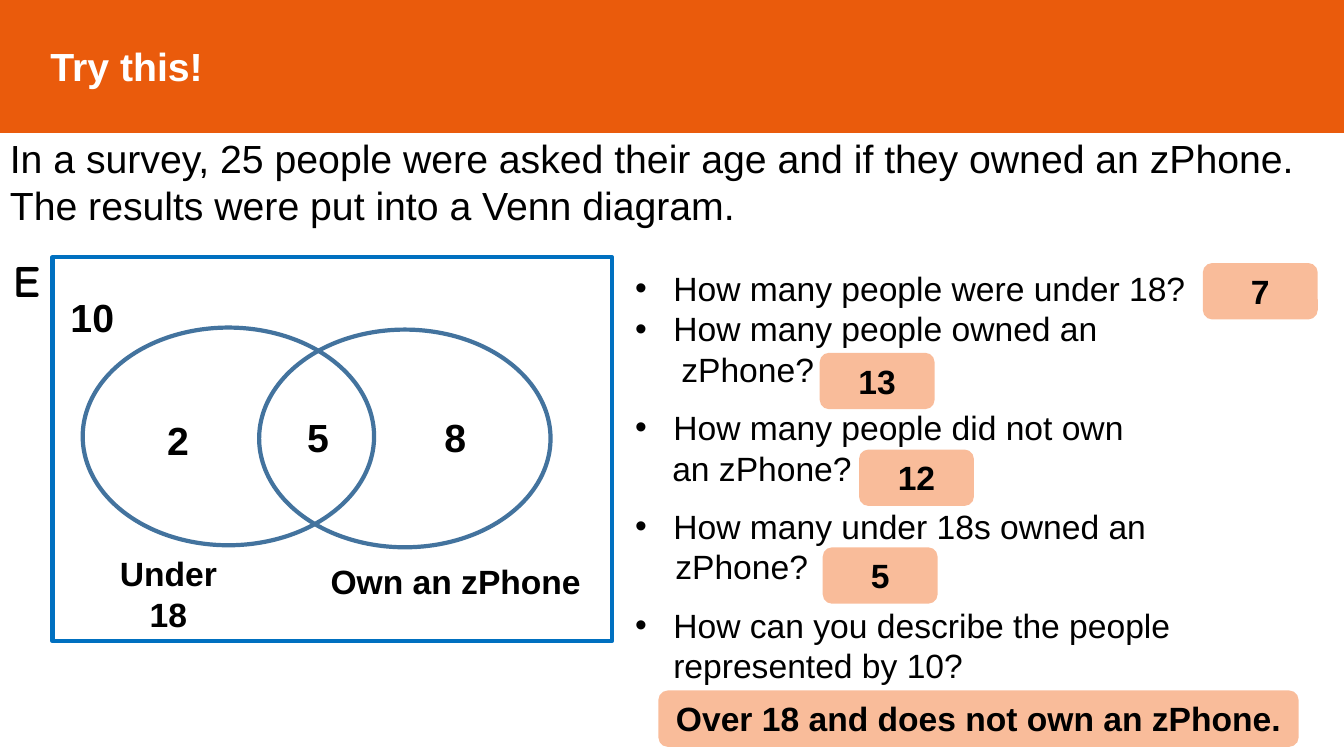
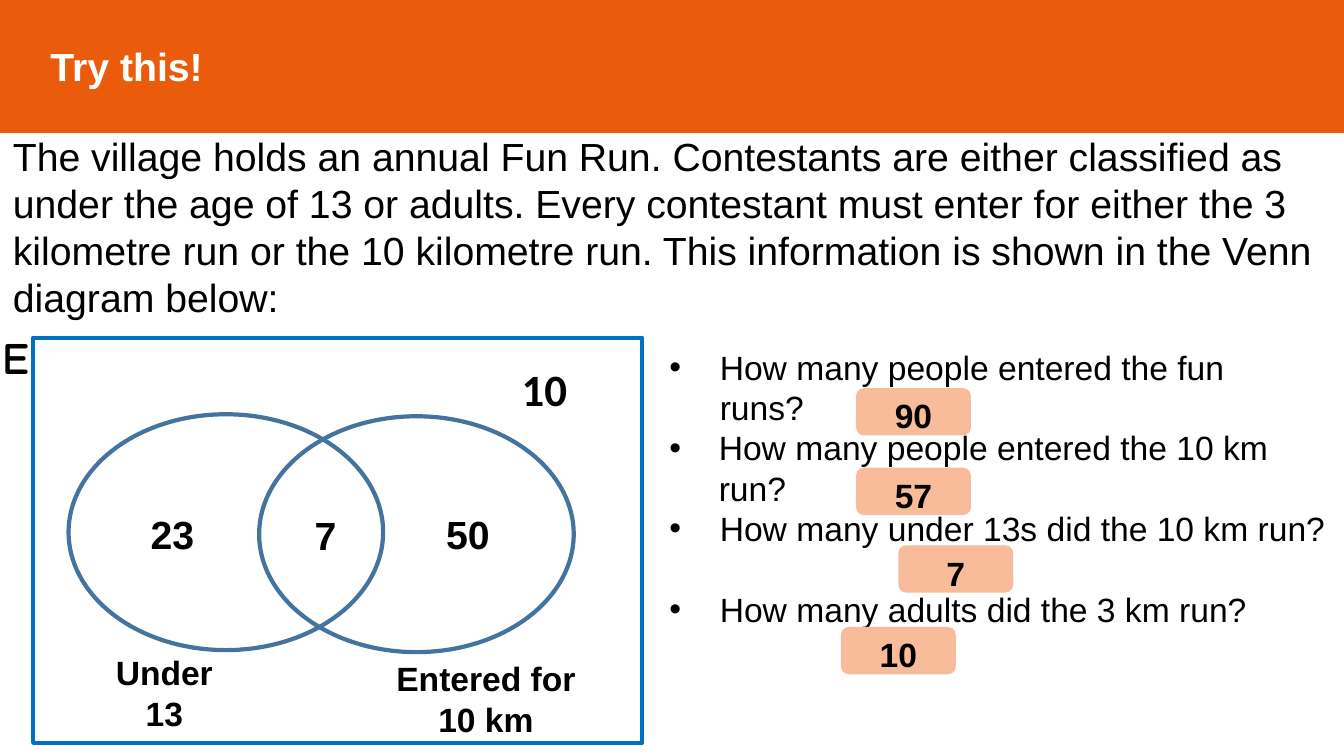
from dataclasses import dataclass

from lxml import etree
from pptx import Presentation
from pptx.dml.color import RGBColor
from pptx.enum.shapes import MSO_SHAPE
from pptx.enum.text import MSO_ANCHOR, PP_ALIGN
from pptx.oxml.ns import qn
from pptx.util import Inches, Pt

ORANGE = RGBColor(0xEA, 0x5B, 0x0C)
PEACH = RGBColor(0xF9, 0xBC, 0x9A)
BLUE = RGBColor(0x00, 0x70, 0xC0)
STEEL = RGBColor(0x43, 0x73, 0x9E)
BLACK = RGBColor(0, 0, 0)
WHITE = RGBColor(0xFF, 0xFF, 0xFF)

RECT = MSO_SHAPE.RECTANGLE
ROUND = MSO_SHAPE.ROUNDED_RECTANGLE
OVAL = MSO_SHAPE.OVAL
LEFT = PP_ALIGN.LEFT
CENTER = PP_ALIGN.CENTER
TOP = MSO_ANCHOR.TOP
MIDDLE = MSO_ANCHOR.MIDDLE

TITLE_ONLY = 5
WIDTH = 13.33
BADGE_W = 1.14


@dataclass(frozen=True)
class Box:
    left: float
    top: float
    width: float
    height: float

    def emu(self) -> tuple:
        return tuple(Inches(v) for v in (self.left, self.top, self.width, self.height))


@dataclass(frozen=True)
class Label:
    text: str
    box: Box
    size: int = 28
    font: str = "Arial"
    bold: bool = True
    align: PP_ALIGN = CENTER
    wrap: bool = True


@dataclass(frozen=True)
class Item:
    text: str
    indent: float = 0.38
    bullet: bool = True
    gap: float = 0


@dataclass(frozen=True)
class Badge:
    text: str
    left: float
    top: float
    width: float = BADGE_W


@dataclass(frozen=True)
class Task:
    frame: Box
    ovals: tuple
    labels: tuple
    list_box: Box
    items: tuple
    badge_h: float
    badges: tuple


def style(par, size: int, color: RGBColor, bold: bool, font: str = "Arial") -> None:
    for run in par.runs:
        run.font.name = font
        run.font.size = Pt(size)
        run.font.bold = bold
        run.font.color.rgb = color


def add_title(slide) -> None:
    title = slide.shapes.title
    title.left, title.top, title.width, title.height = Box(0, -0.01, WIDTH, 1.32).emu()
    title.fill.solid()
    title.fill.fore_color.rgb = ORANGE
    title.line.color.rgb = ORANGE
    title.line.width = Pt(1)
    frame = title.text_frame
    frame.text = "Try this!"
    frame.margin_left = Inches(0.5)
    frame.vertical_anchor = MIDDLE
    par = frame.paragraphs[0]
    par.alignment = LEFT
    style(par, 28, WHITE, True)


def add_outline(slide, kind: MSO_SHAPE, box: Box, color: RGBColor) -> None:
    shape = slide.shapes.add_shape(kind, *box.emu())
    shape.shadow.inherit = False
    shape.fill.background()
    shape.line.color.rgb = color
    shape.line.width = Pt(3)


def add_label(slide, label: Label) -> None:
    frame = slide.shapes.add_textbox(*label.box.emu()).text_frame
    frame.word_wrap = label.wrap
    frame.text = label.text
    par = frame.paragraphs[0]
    par.alignment = label.align
    style(par, label.size, BLACK, label.bold, label.font)


def add_list(slide, box: Box, items: tuple) -> None:
    frame = slide.shapes.add_textbox(*box.emu()).text_frame
    frame.word_wrap = True
    for index, item in enumerate(items):
        par = frame.add_paragraph() if index else frame.paragraphs[0]
        par.text = item.text
        par.space_before = Pt(item.gap)
        style(par, 24, BLACK, False)
        props = par._p.get_or_add_pPr()
        props.set("marL", str(Inches(item.indent)))
        if item.bullet:
            props.set("indent", str(-Inches(item.indent)))
            etree.SubElement(props, qn("a:buFont")).set("typeface", "Arial")
            etree.SubElement(props, qn("a:buChar")).set("char", "•")


def add_badge(slide, badge: Badge, height: float) -> None:
    box = Box(badge.left, badge.top, badge.width, height)
    shape = slide.shapes.add_shape(ROUND, *box.emu())
    shape.shadow.inherit = False
    shape.fill.solid()
    shape.fill.fore_color.rgb = PEACH
    shape.line.fill.background()
    frame = shape.text_frame
    frame.word_wrap = True
    frame.text = badge.text
    frame.vertical_anchor = TOP
    par = frame.paragraphs[0]
    par.alignment = CENTER
    style(par, 24, BLACK, True)


def add_task(deck, task: Task) -> None:
    slide = deck.slides.add_slide(deck.slide_layouts[TITLE_ONLY])
    add_title(slide)
    add_outline(slide, RECT, task.frame, BLUE)
    for oval in task.ovals:
        add_outline(slide, OVAL, oval, STEEL)
    for label in task.labels:
        add_label(slide, label)
    add_list(slide, task.list_box, task.items)
    for badge in task.badges:
        add_badge(slide, badge, task.badge_h)


def intro(text: str, box: Box) -> Label:
    return Label(text, box, bold=False, align=LEFT)


def letter(left: float, top: float) -> Label:
    return Label("E", Box(left, top, 0.4, 0.64), 32, "Comic Neue", align=LEFT, wrap=False)


PHONE = Task(
    frame=Box(0.52, 2.55, 5.55, 3.81),
    ovals=(Box(0.82, 3.25, 2.89, 2.16), Box(2.57, 3.27, 2.89, 2.16)),
    labels=(
        intro(
            "In a survey, 25 people were asked their age and if they owned an zPhone. "
            "The results were put into a Venn diagram.",
            Box(0, 1.28, 13.07, 1.22),
        ),
        letter(0.04, 2.46),
        Label("Own an zPhone", Box(2.96, 5.52, 3.12, 0.5), 24),
        Label("Under 18", Box(0.88, 5.44, 1.58, 0.91), 24),
        Label("8", Box(3.84, 4.05, 1.35, 0.57)),
        Label("5", Box(2.48, 4.05, 1.35, 0.57)),
        Label("2", Box(1.09, 4.08, 1.35, 0.57)),
        Label("10", Box(0.24, 2.86, 1.35, 0.57)),
    ),
    list_box=Box(6.2, 2.61, 7.04, 5.07),
    items=(
        Item("How many people were under 18?"),
        Item("How many people owned an"),
        Item("zPhone?", 0.46, False),
        Item("How many people did not own", gap=13),
        Item("an zPhone?", 0.37, False),
        Item("How many under 18s owned an", gap=13),
        Item("zPhone?", 0.4, False),
        Item("How can you describe the people represented by 10?", gap=13),
    ),
    badge_h=0.56,
    badges=(
        Badge("7", 11.93, 2.61),
        Badge("13", 8.13, 3.5),
        Badge("12", 8.52, 4.46),
        Badge("5", 8.16, 5.43),
        Badge("Over 18 and does not own an zPhone.", 6.53, 6.85, 6.35),
    ),
)

RACE = Task(
    frame=Box(0.33, 3.35, 6.04, 4.02),
    ovals=(Box(0.68, 4.11, 3.12, 2.34), Box(2.57, 4.13, 3.12, 2.34)),
    labels=(
        intro(
            "The village holds an annual Fun Run. Contestants are either classified as "
            "under the age of 13 or adults. Every contestant must enter for either the 3 "
            "kilometre run or the 10 kilometre run. This information is shown in the Venn "
            "diagram below:",
            Box(0.03, 1.26, WIDTH, 1.99),
        ),
        letter(-0.07, 3.22),
        Label("Entered for 10 km", Box(3.61, 6.48, 2.42, 0.91), 24),
        Label("Under 13", Box(0.9, 6.42, 1.46, 0.91), 24),
        Label("50", Box(3.91, 5.01, 1.46, 0.57)),
        Label("7", Box(2.5, 5.02, 1.46, 0.57)),
        Label("23", Box(0.98, 5.01, 1.46, 0.57)),
        Label("10", Box(4.67, 3.54, 1.46, 0.52), 32, "Calibri"),
    ),
    list_box=Box(6.54, 3.39, 6.79, 3.4),
    items=(
        Item("How many people entered the fun\vruns?", 0.5),
        Item("How many people entered the 10 km run?", 0.49),
        Item("How many under 13s did the 10 km run?", 0.5),
        Item("How many adults did the 3 km run?", 0.5, gap=29),
    ),
    badge_h=0.47,
    badges=(
        Badge("90", 8.49, 3.85),
        Badge("57", 8.49, 4.64),
        Badge("7", 8.91, 5.41),
        Badge("10", 8.34, 6.22),
    ),
)


def main() -> None:
    deck = Presentation()
    deck.slide_width = Inches(WIDTH)
    deck.slide_height = Inches(7.5)
    for task in (PHONE, RACE):
        add_task(deck, task)
    deck.save("out.pptx")


if __name__ == "__main__":
    main()
